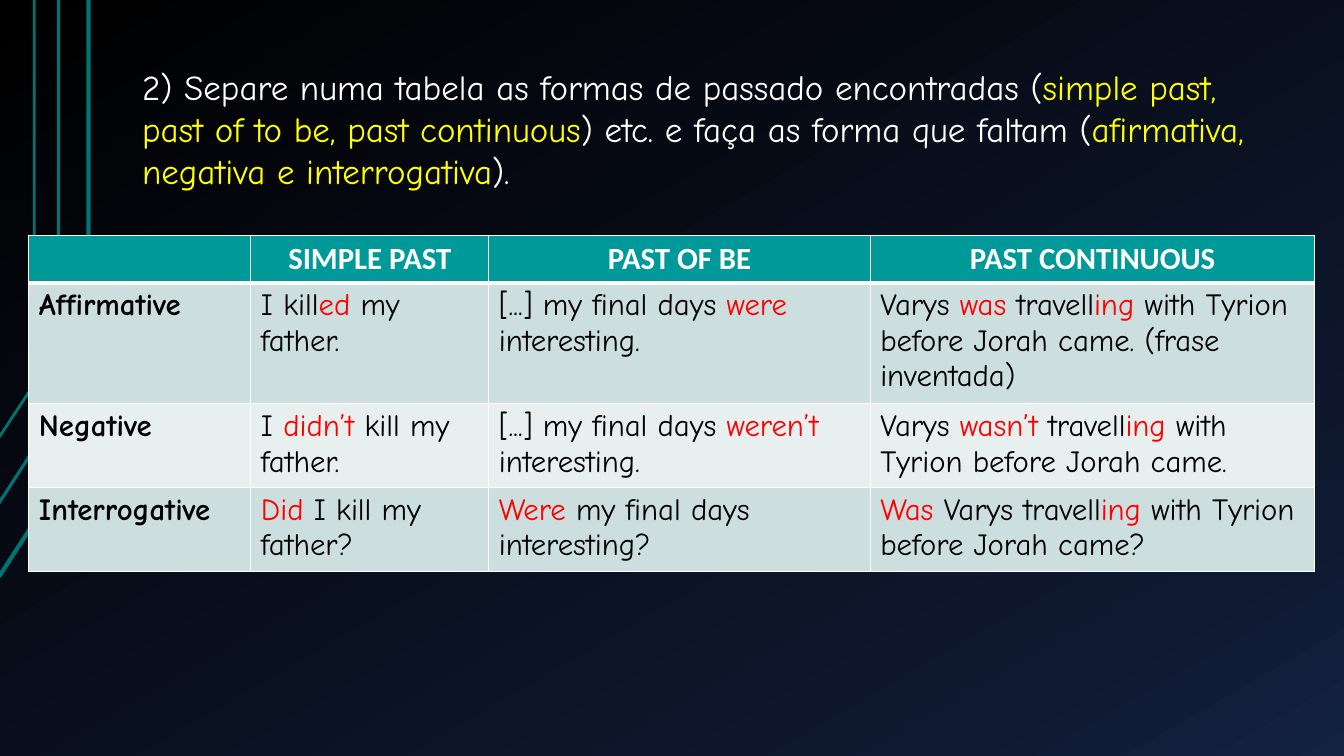
import pptx
import pptx.util
import pptx.dml.color
import pptx.enum.text
import pptx.oxml
import pptx.oxml.ns
from dataclasses import dataclass
from lxml import etree

Pt = pptx.util.Pt
qn = pptx.oxml.ns.qn
Align = pptx.enum.text.PP_ALIGN


@dataclass(frozen=True)
class Theme:
    white: str = "FFFFFF"
    black: str = "000000"
    yellow: str = "FFFF00"
    red: str = "FF0000"
    teal: str = "009999"
    dark_teal: str = "007373"
    bands: tuple = ("CCDEDE", "E7EFEF")
    backdrop: tuple = ((0, "000000"), (85, "0F1931"), (100, "142242"))
    hand_font: str = "Comic Neue"
    header_font: str = "Calibri"
    title_size: float = 25
    table_size: float = 22


THEME = Theme()

# Asterisks enclose the highlighted words
TITLE = ("2) Separe numa tabela as formas de passado encontradas (*simple past, past of to be, "
         "past continuous*) etc. e faça as forma que faltam (*afirmativa, negativa e interrogativa*).")
HEADERS = ("", "SIMPLE PAST", "PAST OF BE", "PAST CONTINUOUS")
ROWS = (
    ("Affirmative", "I kill*ed *my father.", "[...] my final days *were *interesting.",
     "Varys *was *travell*ing *with Tyrion before Jorah came. (frase inventada)"),
    ("Negative", "I *didn’t *kill my father.", "[...] my final days *weren’t *interesting.",
     "Varys *wasn’t *travell*ing *with Tyrion before Jorah came."),
    ("Interrogative", "*Did* I kill my father?", "*Were *my final days interesting?",
     "*Was *Varys travell*ing *with Tyrion before Jorah came?"),
)
COLUMN_WIDTHS = (158.6, 170, 272.4, 317.6)
ROW_HEIGHTS = (33.6, 86.4, 60, 60)


def rgb(code):
    return pptx.dml.color.RGBColor.from_string(code)


def write(para, text, size, font, color, accent=None, bold=False):
    """Add runs, giving the parts between asterisks the accent colour."""
    for index, part in enumerate(text.split("*")):
        if part:
            span = para.add_run()
            span.text = part
            span.font.size = Pt(size)
            span.font.name = font
            span.font.bold = bold
            span.font.color.rgb = rgb(accent if index % 2 else color)


def paint_backdrop(page):
    fill = page.background.fill
    fill.gradient()
    fill.gradient_angle = 300
    stops = page.element.find(".//" + qn("a:gsLst"))
    for stop in list(stops):
        stops.remove(stop)
    for percent, code in THEME.backdrop:
        stop = etree.SubElement(stops, qn("a:gs"), pos=str(percent * 1000))
        etree.SubElement(stop, qn("a:srgbClr"), val=code)


def draw_bent_lines(page, left, top):
    # Offset of the upright, heights of the bend and the foot, line width
    for upright, bend, foot, width in ((64, 313.2, 412, 3), (42.5, 293.8, 359.3, 2.25),
                                       (25.2, 274.3, 312.5, 2)):
        outline = page.shapes.build_freeform(Pt(left), Pt(top + foot))
        outline.add_line_segments([(Pt(left + upright), Pt(top + bend)),
                                   (Pt(left + upright), Pt(top))], close=False)
        shape = outline.convert_to_shape()
        shape.shadow.inherit = False
        shape.fill.background()
        shape.line.color.rgb = rgb(THEME.dark_teal)
        shape.line.width = Pt(width)


def place_title(page, left, top, width, height):
    box = page.shapes.title
    box.left, box.top, box.width, box.height = Pt(left), Pt(top), Pt(width), Pt(height)
    frame = box.text_frame
    frame.word_wrap = True
    frame.auto_size = pptx.enum.text.MSO_AUTO_SIZE.NONE
    frame.vertical_anchor = pptx.enum.text.MSO_ANCHOR.TOP
    para = frame.paragraphs[0]
    para.alignment = Align.LEFT
    write(para, TITLE, THEME.title_size, THEME.hand_font, THEME.white, THEME.yellow)


def style_cell(cell, fill, bottom=1):
    # Borders come before the fill in the cell properties
    properties = cell._tc.get_or_add_tcPr()
    for side, width in (("L", 1), ("R", 1), ("T", 1), ("B", bottom)):
        border = etree.SubElement(properties, qn("a:ln" + side), w=str(Pt(width)))
        solid = etree.SubElement(border, qn("a:solidFill"))
        etree.SubElement(solid, qn("a:srgbClr"), val=THEME.white)
    cell.fill.solid()
    cell.fill.fore_color.rgb = rgb(fill)


def place_table(page, left, top):
    table = page.shapes.add_table(len(ROW_HEIGHTS), len(COLUMN_WIDTHS), Pt(left), Pt(top),
                                  Pt(sum(COLUMN_WIDTHS)), Pt(sum(ROW_HEIGHTS))).table
    for column, width in zip(table.columns, COLUMN_WIDTHS):
        column.width = Pt(width)
    for row, height in zip(table.rows, ROW_HEIGHTS):
        row.height = Pt(height)

    # Header row
    for index, text in enumerate(HEADERS):
        cell = table.cell(0, index)
        style_cell(cell, THEME.teal, bottom=3)
        para = cell.text_frame.paragraphs[0]
        para.alignment = Align.CENTER
        write(para, text, THEME.table_size, THEME.header_font, THEME.white, bold=True)

    # Banded rows with a bold first column
    for number, texts in enumerate(ROWS, start=1):
        for index, text in enumerate(texts):
            cell = table.cell(number, index)
            style_cell(cell, THEME.bands[(number - 1) % 2], bottom=1)
            write(cell.text_frame.paragraphs[0], text, THEME.table_size, THEME.hand_font,
                  THEME.black, THEME.red, bold=index == 0)
    # The header's thick rule is also the top of the first band
    for index in range(len(HEADERS)):
        table.cell(1, index)._tc.tcPr.find(qn("a:lnT")).set("w", str(Pt(3)))


def main():
    deck = pptx.Presentation()
    deck.slide_width, deck.slide_height = Pt(960), Pt(540)
    page = deck.slides.add_slide(deck.slide_layouts[5])
    paint_backdrop(page)
    draw_bent_lines(page, -0.7, 0)
    place_title(page, 94.3, 43.2, 805, 98)
    place_table(page, 20.6, 168)
    deck.save("out.pptx")


if __name__ == "__main__":
    main()
